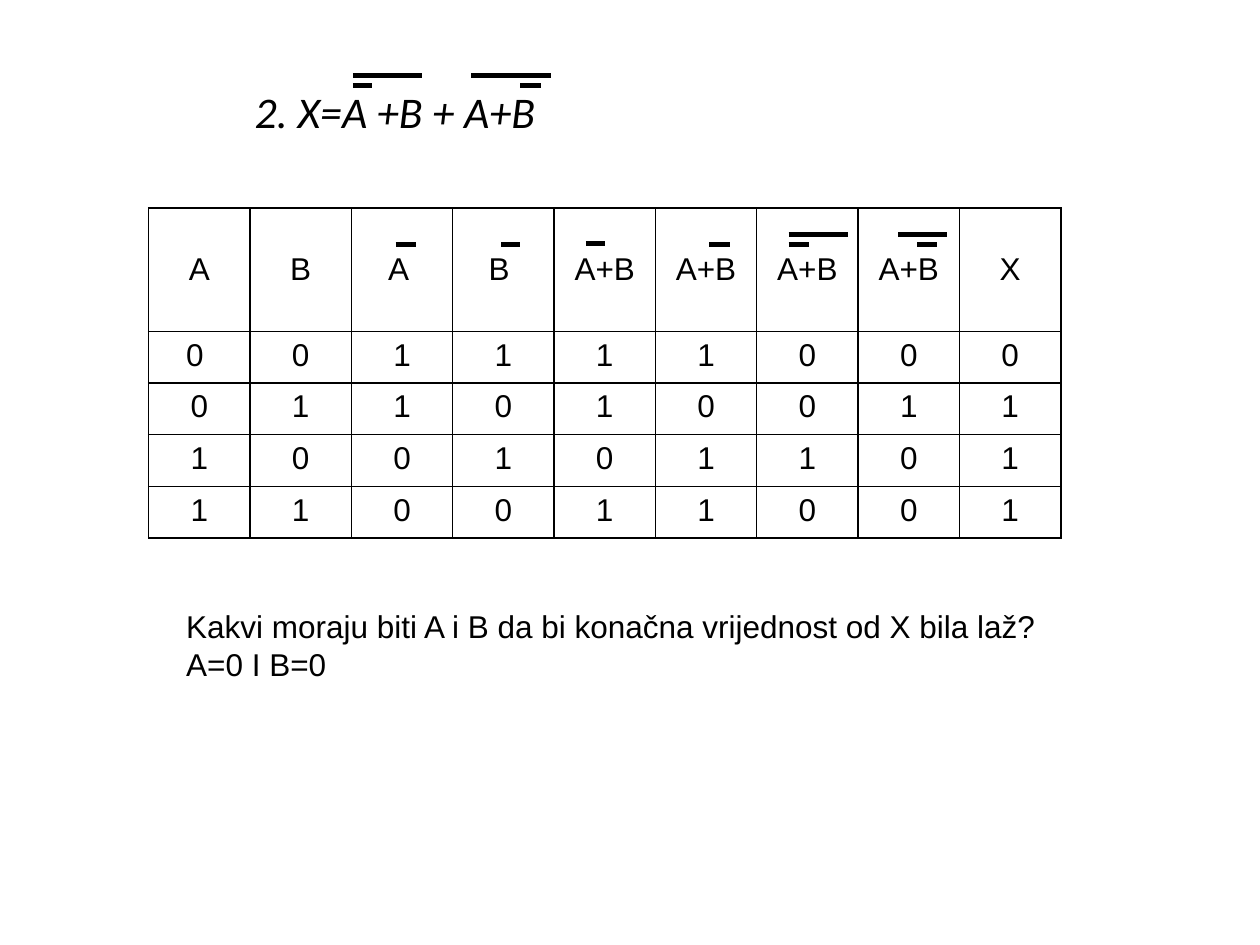
"""Build a slide with the truth table of a logic expression and its solution."""
from lxml.etree import SubElement
from pptx import Presentation
from pptx.dml.color import RGBColor
from pptx.enum.shapes import MSO_CONNECTOR
from pptx.enum.text import MSO_ANCHOR, MSO_AUTO_SIZE, PP_ALIGN
from pptx.oxml.ns import qn
from pptx.util import Inches, Pt

BLACK = "000000"
HEADERS = ["A", "B", "A ", "B ", "A+B", "A+B", "A+B", "A+B", "X"]
VALUES = [
    ["0 ", "0", "1", "1", "1", "1", "0", "0", "0"],
    ["0", "1", "1", "0", "1", "0", "0", "1", "1"],
    ["1", "0", "0", "1", "0", "1", "1", "0", "1"],
    ["1", "1", "0", "0", "1", "1", "0", "0", "1"],
]
TITLE_OVERLINES = [(2.8, 2.95, 0.68), (4.13, 4.29, 0.68), (2.8, 3.35, 0.6), (3.74, 4.37, 0.6)]
HEADER_OVERLINES = [
    (3.14, 3.3, 1.94), (3.98, 4.13, 1.94), (4.65, 4.8, 1.93), (5.63, 5.79, 1.94),
    (6.26, 6.42, 1.94), (7.28, 7.44, 1.94), (6.26, 6.73, 1.86), (7.13, 7.52, 1.86),
]


def write_text(frame, text, font="Arial", size=18, color=BLACK, italic=False,
               align=PP_ALIGN.LEFT, anchor=MSO_ANCHOR.TOP):
    frame.text = text
    frame.word_wrap = True
    frame.vertical_anchor = anchor
    for paragraph in frame.paragraphs:
        paragraph.alignment = align
        for run in paragraph.runs:
            run.font.name = font
            run.font.size = Pt(size)
            run.font.italic = italic
            run.font.color.rgb = RGBColor.from_string(color)


def add_borders(cell, color=BLACK, width=1):
    properties = cell._tc.get_or_add_tcPr()
    for side in ("a:lnL", "a:lnR", "a:lnT", "a:lnB"):
        border = SubElement(properties, qn(side), w=str(Pt(width)))
        fill = SubElement(border, qn("a:solidFill"))
        SubElement(fill, qn("a:srgbClr"), val=color)


presentation = Presentation()
presentation.slide_width = Inches(10)
presentation.slide_height = Inches(7.5)
slide = presentation.slides.add_slide(presentation.slide_layouts[5])

title = slide.shapes.title
title.left, title.top = Inches(1.92), Inches(0.53)
title.width, title.height = Inches(7.58), Inches(0.7)
write_text(title.text_frame, "2. X=A +B + A+B", font="Calibri", size=25,
           italic=True, anchor=MSO_ANCHOR.MIDDLE)
title.text_frame.auto_size = MSO_AUTO_SIZE.NONE

rows = [HEADERS] + VALUES
table = slide.shapes.add_table(len(rows), len(HEADERS), Inches(1.18), Inches(1.65),
                               Inches(7.24), Inches(2.61)).table
table.first_row = False
table.horz_banding = False
for row_index, row in enumerate(rows):
    is_header = row_index == 0
    table.rows[row_index].height = Inches(0.98 if is_header else 0.41)
    for column_index, text in enumerate(row):
        cell = table.cell(row_index, column_index)
        write_text(cell.text_frame, text, align=PP_ALIGN.CENTER)
        cell.vertical_anchor = MSO_ANCHOR.MIDDLE if is_header else MSO_ANCHOR.TOP
        add_borders(cell)
        cell.fill.background()

question = slide.shapes.add_textbox(Inches(1.38), Inches(4.77), Inches(7.17), Inches(0.71))
write_text(question.text_frame,
           "Kakvi moraju biti A i B da bi konačna vrijednost od X bila laž?\nA=0 I B=0")
question.text_frame.auto_size = MSO_AUTO_SIZE.SHAPE_TO_FIT_TEXT

for start, end, top in TITLE_OVERLINES + HEADER_OVERLINES:
    overline = slide.shapes.add_connector(MSO_CONNECTOR.STRAIGHT, Inches(start), Inches(top),
                                          Inches(end), Inches(top))
    overline.line.color.rgb = RGBColor.from_string(BLACK)
    overline.line.width = Pt(3)
    SubElement(overline._element.spPr, qn("a:effectLst"))

presentation.save("out.pptx")
